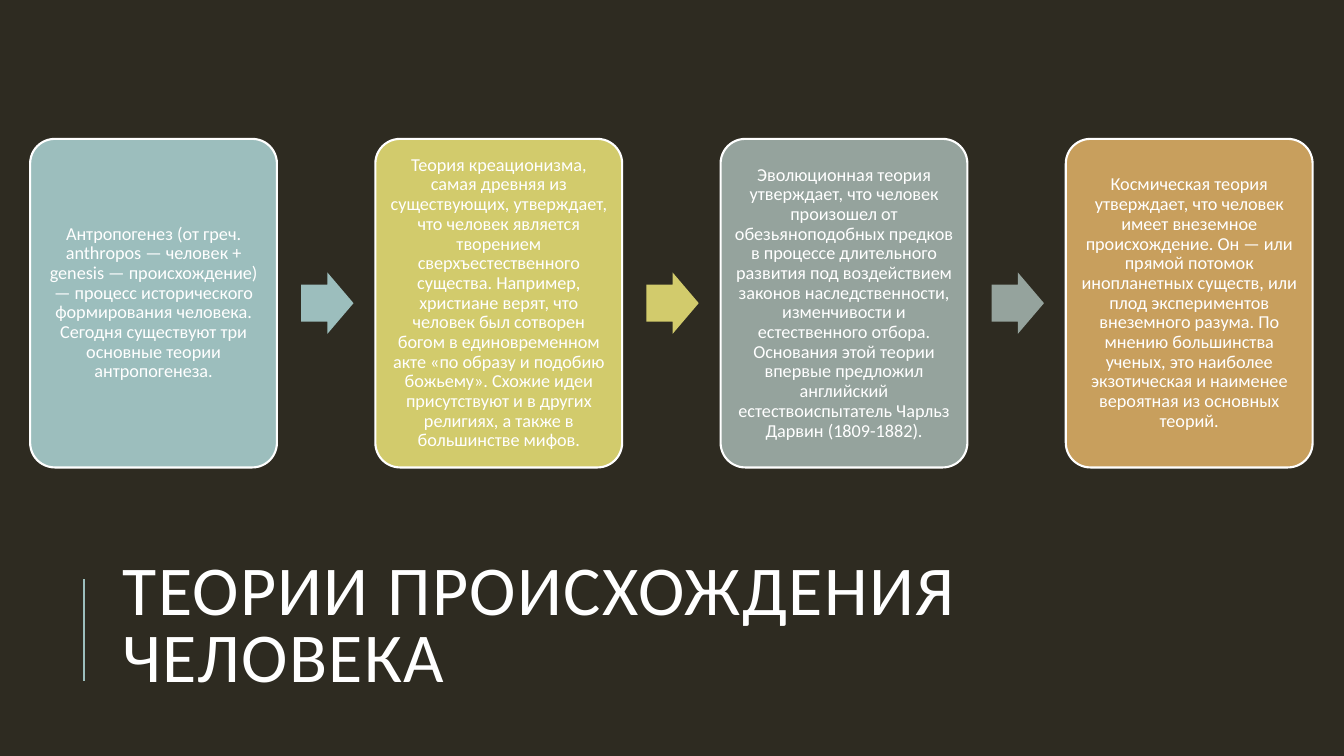
from lxml import etree
from pptx import Presentation
from pptx import util as u
from pptx.dml.color import RGBColor
from pptx.enum import shapes, text
from pptx.oxml.ns import qn

DARK = RGBColor(0x2E, 0x2B, 0x21)
WHITE = RGBColor(0xFF, 0xFF, 0xFF)
TEAL = RGBColor(0x9C, 0xBE, 0xBD)
YELLOW = RGBColor(0xD2, 0xCB, 0x6C)
GREY = RGBColor(0x95, 0xA3, 0x9D)
OCHRE = RGBColor(0xC8, 0x9F, 0x5D)

TITLE = "ТЕОРИИ ПРОИСХОЖДЕНИЯ ЧЕЛОВЕКА"
THEORIES = [
    (TEAL, "Антропогенез (от греч. anthropos — человек + genesis — происхождение) "
           "— процесс исторического формирования человека. Сегодня существуют три "
           "основные теории антропогенеза."),
    (YELLOW, "Теория креационизма, самая древняя из существующих, утверждает, что "
             "человек является творением сверхъестественного существа. Например, "
             "христиане верят, что человек был сотворен богом в единовременном акте "
             "«по образу и подобию божьему». Схожие идеи присутствуют и в других "
             "религиях, а также в большинстве мифов."),
    (GREY, "Эволюционная теория утверждает, что человек произошел от "
           "обезьяноподобных предков в процессе длительного развития под "
           "воздействием законов наследственности, изменчивости и естественного "
           "отбора. Основания этой теории впервые предложил английский "
           "естествоиспытатель Чарльз Дарвин (1809-1882)."),
    (OCHRE, "Космическая теория утверждает, что человек имеет внеземное "
            "происхождение. Он — или прямой потомок инопланетных существ, или плод "
            "экспериментов внеземного разума. По мнению большинства ученых, это "
            "наиболее экзотическая и наименее вероятная из основных теорий."),
]

# Layout of the row of cards, in centimetres
CARD_LEFT, CARD_TOP, CARD_WIDTH, CARD_HEIGHT = 0.76, 3.5, 6.22, 8.28
CARD_STEP = 8.7
ARROW_OFFSET, ARROW_WIDTH, ARROW_HEIGHT = 6.83, 1.32, 1.55
ARROW_TOP = CARD_TOP + (CARD_HEIGHT - ARROW_HEIGHT) / 2


class SlideBuilder:
    font = "Calibri"

    def __init__(self, deck):
        self.page = deck.slides.add_slide(deck.slide_layouts[5])
        background = self.page.background.fill
        background.solid()
        background.fore_color.rgb = DARK

    def add_wording(self, box, wording, size, align, spacing):
        frame = box.text_frame
        frame.word_wrap = True
        frame.auto_size = text.MSO_AUTO_SIZE.NONE
        frame.vertical_anchor = text.MSO_ANCHOR.MIDDLE
        para = frame.paragraphs[0]
        para.alignment = align
        para.line_spacing = spacing
        span = para.add_run()
        span.text = wording
        span.font.name = self.font
        span.font.size = u.Pt(size)
        span.font.color.rgb = WHITE
        return span

    def title(self, wording, left, top, width, height):
        box = self.page.shapes.title
        box.left, box.top = u.Cm(left), u.Cm(top)
        box.width, box.height = u.Cm(width), u.Cm(height)
        span = self.add_wording(box, wording, 50, text.PP_ALIGN.LEFT, 0.8)
        span.font._element.set("spc", "100")

    def shape(self, kind, left, top, width, height, color, adjustments):
        item = self.page.shapes.add_shape(
            kind, u.Cm(left), u.Cm(top), u.Cm(width), u.Cm(height))
        item.shadow.inherit = False
        item.fill.solid()
        item.fill.fore_color.rgb = color
        for index, value in enumerate(adjustments):
            item.adjustments[index] = value
        return item

    def card(self, wording, left, color):
        box = self.shape(shapes.MSO_SHAPE.ROUNDED_RECTANGLE, left, CARD_TOP,
                         CARD_WIDTH, CARD_HEIGHT, color, [0.1])
        box.line.color.rgb = WHITE
        box.line.width = u.Pt(1.5)
        frame = box.text_frame
        frame.margin_left = frame.margin_right = u.Cm(0.13)
        frame.margin_top = frame.margin_bottom = u.Cm(0.13)
        self.add_wording(box, wording, 13, text.PP_ALIGN.CENTER, 0.9)

    def arrow(self, left, color):
        item = self.shape(shapes.MSO_SHAPE.RIGHT_ARROW, left, ARROW_TOP,
                          ARROW_WIDTH, ARROW_HEIGHT, color, [0.6, 0.5])
        item.line.fill.background()

    def rule(self, x, start, end, color):
        line = self.page.shapes.add_connector(
            shapes.MSO_CONNECTOR.STRAIGHT, u.Cm(x), u.Cm(start), u.Cm(x), u.Cm(end))
        line.line.color.rgb = color
        line.line.width = u.Pt(1.5)
        etree.SubElement(line._element.spPr, qn("a:effectLst"))


def main():
    deck = Presentation()
    deck.slide_width, deck.slide_height = u.Cm(33.87), u.Cm(19.05)
    builder = SlideBuilder(deck)

    # Title with its accent rule
    builder.title(TITLE, 2.84, 13.77, 27, 4.17)
    builder.rule(2.11, 17.15, 14.6, TEAL)

    # Theories, with an arrow from each card to the next
    for index, (color, wording) in enumerate(THEORIES):
        left = CARD_LEFT + index * CARD_STEP
        builder.card(wording, left, color)
        if index < len(THEORIES) - 1:
            builder.arrow(left + ARROW_OFFSET, color)

    deck.save("out.pptx")


if __name__ == "__main__":
    main()
